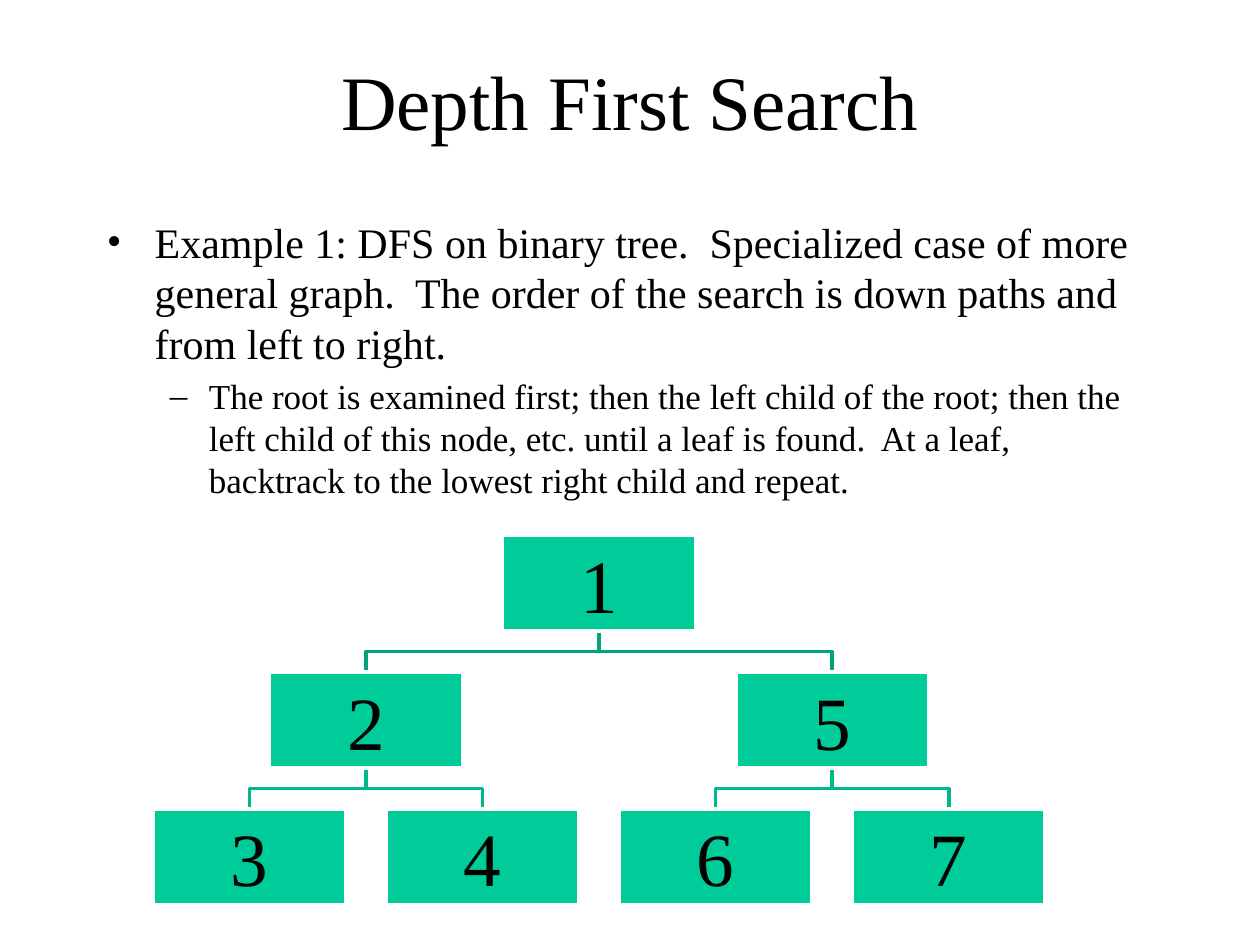
import pptx
import pptx.util
import pptx.dml.color
import pptx.enum.shapes
import pptx.enum.text
import pptx.oxml.ns
import lxml.etree

Inches = pptx.util.Inches
Pt = pptx.util.Pt
RGBColor = pptx.dml.color.RGBColor
ALIGN = pptx.enum.text.PP_ALIGN
ANCHOR = pptx.enum.text.MSO_ANCHOR

BLACK = RGBColor(0x00, 0x00, 0x00)
WHITE = RGBColor(0xFF, 0xFF, 0xFF)
GREEN = RGBColor(0x00, 0xCC, 0x99)
EDGES = [RGBColor(0x00, 0xA3, 0x7B), RGBColor(0x00, 0xB9, 0x8B)]  # by level
FONT = "Times New Roman"

DEPTH = 2
LEAF_X, LEAF_GAP = 1.98, 1.85
ROOT_Y, LEVEL_GAP = 4.25, 1.085
BOX_W, BOX_H = 1.53, 0.76

POINTS = [  # level, bullet, indent, hanging, size, text
    (0, "•", 0.38, 0.38, 24,
     "Example 1: DFS on binary tree.  Specialized case of more general graph.  "
     "The order of the search is down paths and from left to right."),
    (1, "–", 0.81, 0.31, 20,
     "The root is examined first; then the left child of the root; then the "
     "left child of this node, etc. until a leaf is found.  At a leaf, "
     "backtrack to the lowest right child and repeat."),
]


def add_run(para, text, size):
    run = para.add_run()
    run.text = text
    run.font.name = FONT
    run.font.size = Pt(size)
    run.font.color.rgb = BLACK


def add_title(slide, text):
    title = slide.shapes.title
    title.left, title.top = Inches(0.75), Inches(0.17)
    title.width, title.height = Inches(8.5), Inches(1.25)
    title.text_frame.vertical_anchor = ANCHOR.MIDDLE
    para = title.text_frame.paragraphs[0]
    para.alignment = ALIGN.CENTER
    add_run(para, text, 44)


def set_bullet(para, char, indent, hang):
    props = para._p.get_or_add_pPr()
    props.set("marL", str(Inches(indent)))
    props.set("indent", str(-Inches(hang)))
    for tag, key, value in (("a:buFont", "typeface", FONT), ("a:buChar", "char", char)):
        lxml.etree.SubElement(props, pptx.oxml.ns.qn(tag)).set(key, value)


def add_points(slide):
    box = slide.shapes.add_textbox(Inches(0.75), Inches(1.67), Inches(8.5), Inches(4.5))
    frame = box.text_frame
    frame.word_wrap = True
    for i, (level, char, indent, hang, size, text) in enumerate(POINTS):
        para = frame.add_paragraph() if i else frame.paragraphs[0]
        para.level = level
        para.space_before = Pt(size * 0.2)
        set_bullet(para, char, indent, hang)
        add_run(para, text, size)


def walk(level=0, first=0, parent=None):
    """Yield (level, centre, parent centre) depth first, left before right."""
    span = 2 ** (DEPTH - level)
    x = LEAF_X + LEAF_GAP * (first + (span - 1) / 2)
    yield level, x, parent
    if level < DEPTH:
        yield from walk(level + 1, first, x)
        yield from walk(level + 1, first + span // 2, x)


def add_edge(slide, level, x, parent):
    end = ROOT_Y + LEVEL_GAP * level
    start = end - LEVEL_GAP + BOX_H
    mid = (start + end) / 2
    route = [(Inches(a), Inches(b))
             for a, b in ((parent, start), (parent, mid), (x, mid), (x, end))]
    path = slide.shapes.build_freeform(*route[0])
    path.add_line_segments(route[1:], close=False)
    edge = path.convert_to_shape()
    edge.shadow.inherit = False
    edge.fill.background()
    edge.line.color.rgb = EDGES[level - 1]
    edge.line.width = Pt(2)


def add_node(slide, level, x, label):
    node = slide.shapes.add_shape(
        pptx.enum.shapes.MSO_SHAPE.RECTANGLE,
        Inches(x - BOX_W / 2), Inches(ROOT_Y + LEVEL_GAP * level),
        Inches(BOX_W), Inches(BOX_H))
    node.shadow.inherit = False
    node.fill.solid()
    node.fill.fore_color.rgb = GREEN
    node.line.color.rgb = WHITE
    node.line.width = Pt(2)
    frame = node.text_frame
    frame.margin_left = frame.margin_right = Inches(0.03)
    frame.margin_top = frame.margin_bottom = Inches(0.03)
    frame.vertical_anchor = ANCHOR.MIDDLE
    frame.paragraphs[0].alignment = ALIGN.CENTER
    add_run(frame.paragraphs[0], label, 43)


def add_tree(slide):
    nodes = list(walk())
    for level, x, parent in nodes[1:]:
        add_edge(slide, level, x, parent)
    for order, (level, x, _) in enumerate(nodes, 1):
        add_node(slide, level, x, str(order))


def main():
    deck = pptx.Presentation()
    deck.slide_width, deck.slide_height = Inches(10), Inches(7.5)
    slide = deck.slides.add_slide(deck.slide_layouts[5])
    add_title(slide, "Depth First Search")
    add_points(slide)
    add_tree(slide)
    deck.save("out.pptx")


if __name__ == "__main__":
    main()
